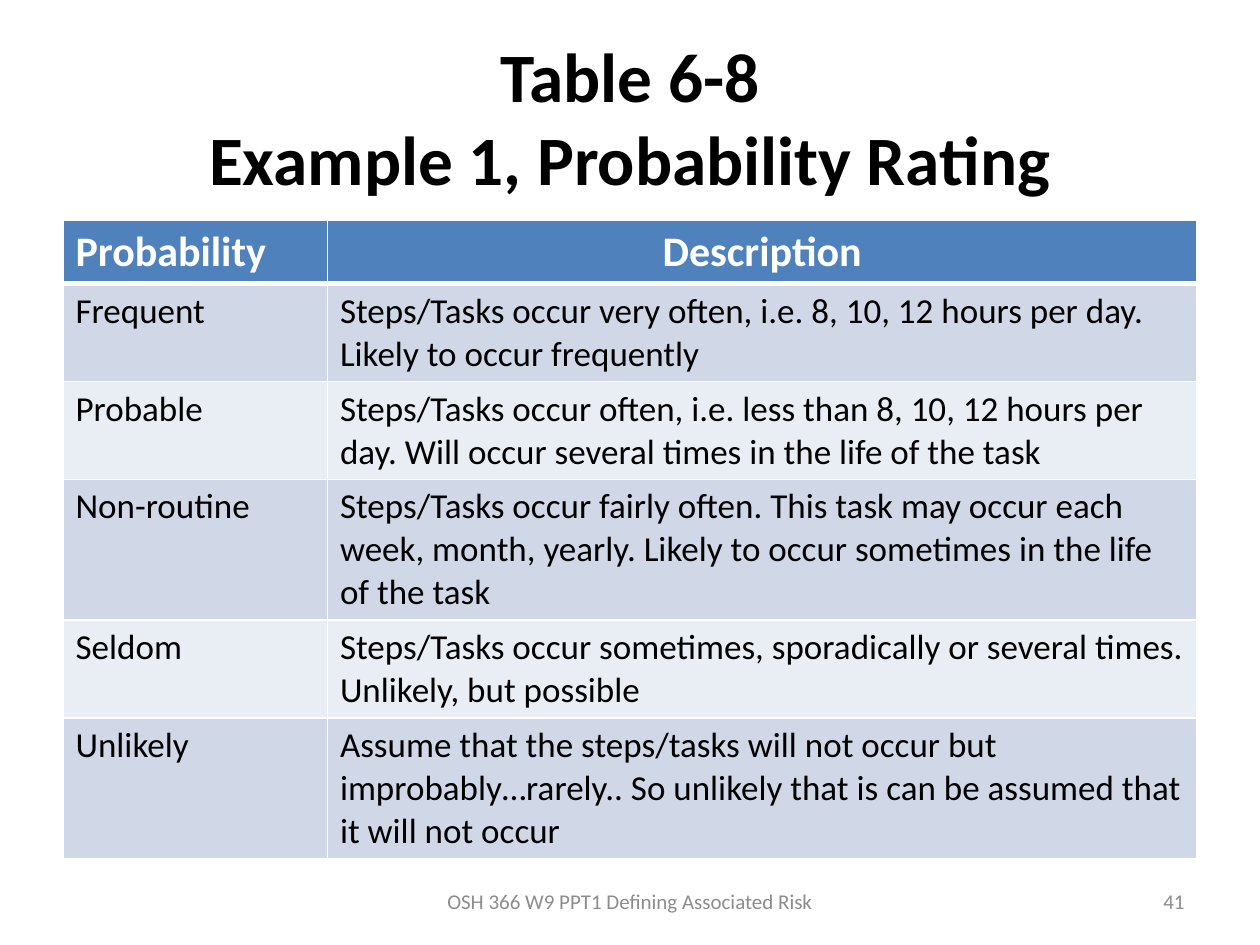
from pptx import Presentation
from pptx.dml.color import RGBColor as RGB
from pptx.enum.text import MSO_ANCHOR as Anchor, PP_ALIGN as Align
from pptx.oxml.ns import qn
from pptx.util import Cm, Pt
from lxml.etree import SubElement as Sub

WHITE = RGB(0xFF, 0xFF, 0xFF)
BLACK = RGB(0, 0, 0)
GRAY = RGB(0x8C, 0x8C, 0x8C)
BLUE = RGB(0x4F, 0x81, 0xBD)
BANDS = RGB(0xE9, 0xED, 0xF4), RGB(0xD0, 0xD8, 0xE8)

TITLE = "Table 6-8\nExample 1, Probability Rating"
FOOTER = "OSH 366 W9 PPT1 Defining Associated Risk"
NUMBER = "41"
COLS = 5.33, 17.53
ROWS = [
    (1.27, "Probability", "Description"),
    (1.97, "Frequent", "Steps/Tasks occur very often, i.e. 8, 10, 12 hours per day. "
     "Likely to occur frequently"),
    (1.97, "Probable", "Steps/Tasks occur often, i.e. less than 8, 10, 12 hours per day. "
     "Will occur several times in the life of the task"),
    (2.84, "Non-routine", "Steps/Tasks occur fairly often. This task may occur each week, "
     "month, yearly. Likely to occur sometimes in the life of the task"),
    (1.97, "Seldom", "Steps/Tasks occur sometimes, sporadically or several times. "
     "Unlikely, but possible"),
    (2.84, "Unlikely", "Assume that the steps/tasks will not occur but improbably…rarely.. "
     "So unlikely that is can be assumed that it will not occur"),
]


def write(frame, text, size, color, align=Align.LEFT, bold=False):
    para = frame.paragraphs[0]
    para.text = text
    para.alignment = align
    font = para.font
    font.name, font.size, font.bold = "Calibri", Pt(size), bold
    font.color.rgb = color


def label(slide, area, *style):
    frame = slide.shapes.add_textbox(*map(Cm, area)).text_frame
    frame.word_wrap = True
    frame.vertical_anchor = Anchor.MIDDLE
    write(frame, *style)


def edge(cell, widths):
    props = cell._tc.get_or_add_tcPr()
    for side, width in zip("LRTB", widths):
        line = Sub(props, qn(f"a:ln{side}"), w=str(Pt(width)))
        fill = Sub(line, qn("a:solidFill"))
        Sub(fill, qn("a:srgbClr"), val=str(WHITE))


def grid(slide):
    high = sum(row[0] for row in ROWS)
    area = map(Cm, (1.27, 4.45, sum(COLS), high))
    table = slide.shapes.add_table(len(ROWS), len(COLS), *area).table
    for col, width in zip(table.columns, COLS):
        col.width = Cm(width)
    for r, (height, *texts) in enumerate(ROWS):
        table.rows[r].height = Cm(height)
        for c, text in enumerate(texts):
            cell = table.cell(r, c)
            edge(cell, (1, 1, 3 if r == 1 else 1, 3 if r == 0 else 1))
            cell.fill.solid()
            cell.fill.fore_color.rgb = BANDS[r % 2] if r else BLUE
            if r:
                write(cell.text_frame, text, 20, BLACK)
            else:
                align = Align.CENTER if c else Align.LEFT
                write(cell.text_frame, text, 24, WHITE, align, True)


def main():
    deck = Presentation()
    deck.slide_width, deck.slide_height = Cm(25.4), Cm(19.05)
    slide = deck.slides.add_slide(deck.slide_layouts[6])
    label(slide, (1.27, 0.76, 22.86, 3.18), TITLE, 39.6, BLACK, Align.CENTER, True)
    grid(slide)
    label(slide, (8.68, 17.66, 8.04, 1.01), FOOTER, 12, GRAY, Align.CENTER)
    label(slide, (18.2, 17.66, 5.93, 1.01), NUMBER, 12, GRAY, Align.RIGHT)
    deck.save("out.pptx")


if __name__ == "__main__":
    main()
